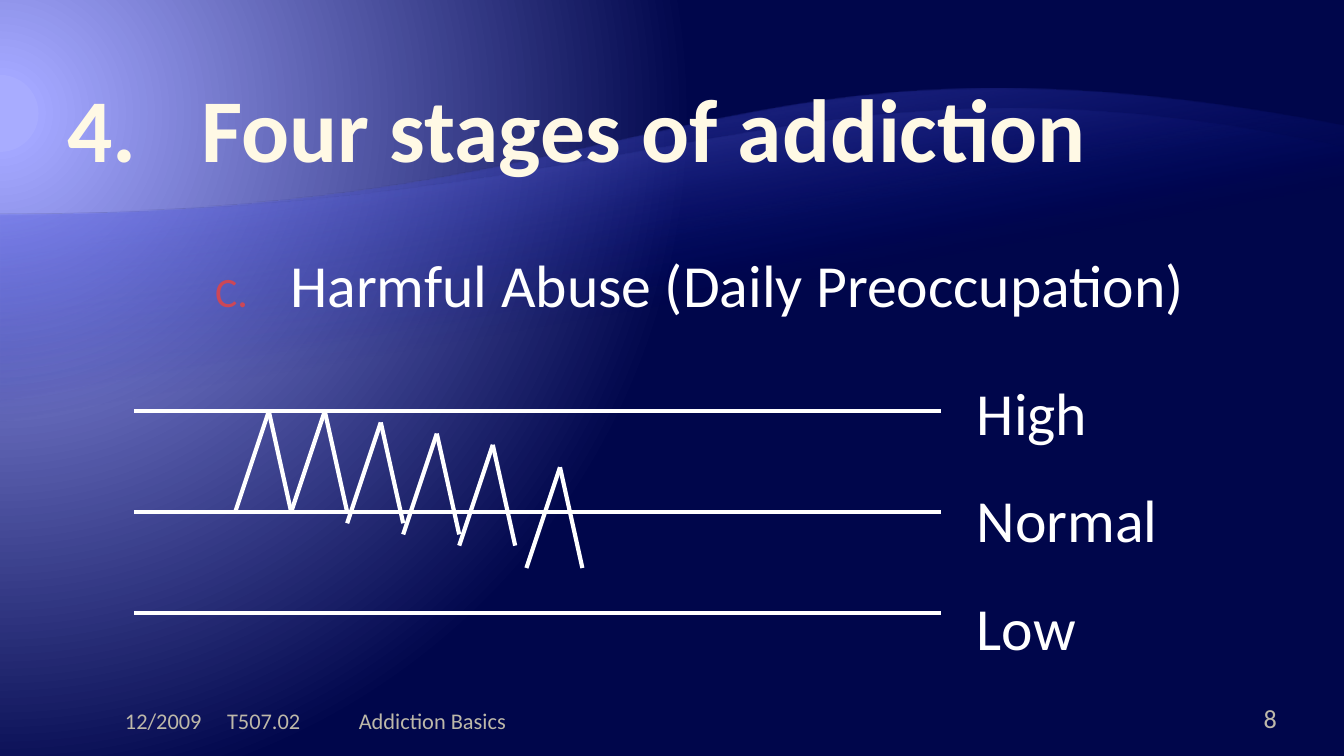
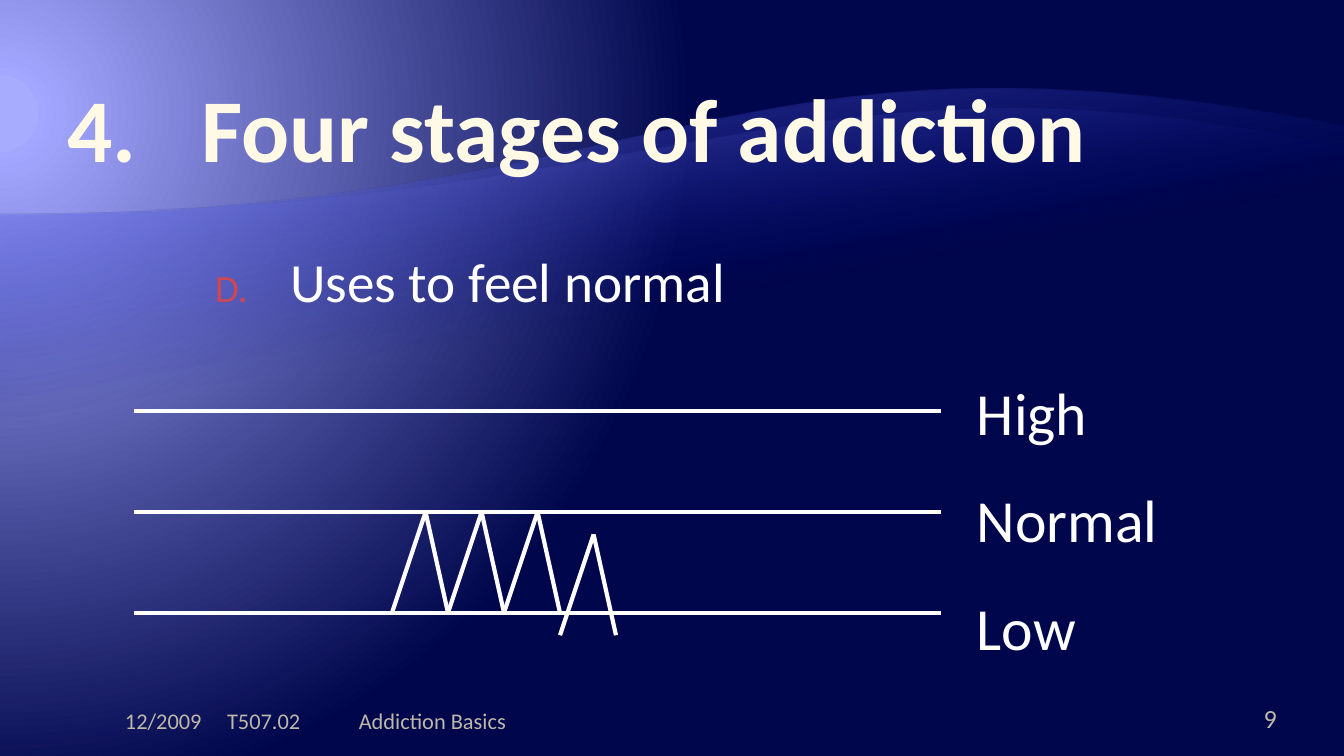
from pptx import Presentation
from pptx.dml.color import RGBColor
from pptx.enum.shapes import MSO_CONNECTOR
from pptx.enum.text import MSO_ANCHOR, MSO_AUTO_SIZE, PP_ALIGN
from pptx.oxml import parse_xml
from pptx.oxml.ns import nsdecls, qn
from pptx.util import Inches, Pt
from lxml.etree import SubElement

FONT = "Calibri"
WHITE = RGBColor(0xFF, 0xFF, 0xFF)
CREAM = RGBColor(0xFF, 0xF9, 0xE5)
SAND = RGBColor(0xBD, 0xB8, 0xA9)
RED = RGBColor(0xCC, 0x47, 0x57)
NAVY = RGBColor(0x00, 0x06, 0x4B)
BLUE = RGBColor(0x00, 0x0D, 0x9E)
PERIWINKLE = RGBColor(0x79, 0x7F, 0xFF)
LILAC = RGBColor(0xA3, 0xA7, 0xFF)
PALE_LILAC = RGBColor(0xA8, 0xAC, 0xFF)

WIDTH, HEIGHT = 10, 5.625
TITLE_BOX = (0.5, 0.31, 9, 1.04)
STAGE_BOX = (1.5, 1.79, 8.5, 0.94)
GRAPH_BOX = (1, 3.06, 6, 1.5)
LABEL_BOX = (7.17, 2.48, 2.33, 2.44)
FOOTER_TOP, FOOTER_HEIGHT = 5.21, 0.3

TITLE = "4.\tFour stages of addiction"
LEVELS = ("High", "Normal", "Low")
GRAPH_COLUMNS, GRAPH_ROWS = 72, 18
RISE_COLUMNS, FALL_COLUMNS, PEAK_ROWS = 3, 2, 9

# Each swing is the (column, row) of its low starting point on the graph grid
STAGES = [
    dict(name="Harmful Abuse (Daily Preoccupation)", letter=3, size=32, number=8,
         swings=[(9, 9), (14, 9), (19, 10), (24, 11), (29, 12), (35, 14)]),
    dict(name="Uses to feel normal", letter=4, size=29.6, number=9,
         swings=[(23, 18), (28, 18), (33, 18), (38, 20)]),
]


def place(shape, box):
    shape.left, shape.top, shape.width, shape.height = map(Inches, box)


def write(shape, lines, size, color, bold=False):
    frame = shape.text_frame
    frame.word_wrap = True
    frame.auto_size = MSO_AUTO_SIZE.NONE
    frame.text = "\n".join(lines)
    for para in frame.paragraphs:
        for span in para.runs:
            font = span.font
            font.name, font.size, font.bold = FONT, Pt(size), bold
            font.color.rgb = color
    return frame


def set_insets(frame, left, top, right, bottom):
    frame.margin_left, frame.margin_top = Inches(left), Inches(top)
    frame.margin_right, frame.margin_bottom = Inches(right), Inches(bottom)


def set_gradient(fill, parent, stops, direction):
    """Stops are (percent, colour, opacity percent)."""
    fill.solid()
    marks = "".join(
        f'<a:gs pos="{position * 1000}"><a:srgbClr val="{color}">'
        f'<a:alpha val="{opacity * 1000}"/></a:srgbClr></a:gs>'
        for position, color, opacity in stops)
    gradient = parse_xml(f'<a:gradFill {nsdecls("a")} rotWithShape="1">'
                         f'<a:gsLst>{marks}</a:gsLst>{direction}</a:gradFill>')
    solid = parent.find(qn("a:solidFill"))
    parent.replace(solid, gradient)


def add_wave(page, layout, bottom, bend, right_edge, color, opacity, order):
    """Band with a curved upper edge, shared through the layout."""
    left_edge = 1.6
    builder = page.shapes.build_freeform(Inches(WIDTH), Inches(bottom))
    builder.add_line_segments(
        [(Inches(x), Inches(y)) for x, y in
         ((0, bottom), (0, left_edge), (WIDTH, right_edge))], close=True)
    wave = builder.convert_to_shape()
    wave.shadow.inherit = False
    wave.line.fill.background()
    set_gradient(wave.fill, wave.element.spPr,
                 [(65, BLUE, 0), (100, color, opacity)],
                 f'<a:lin ang="{260 * 60000}" scaled="0"/>')

    # Bend the upper edge
    edge = wave.element.findall(".//" + qn("a:lnTo"))[2]
    curve = parse_xml(f'<a:cubicBezTo {nsdecls("a")}/>')
    for x, y in ((5, left_edge), bend, (WIDTH, right_edge)):
        SubElement(curve, qn("a:pt"), x=str(Inches(x)), y=str(Inches(y - right_edge)))
    edge.getparent().replace(edge, curve)

    wave.name = f"Wave {order}"
    wave.element.nvSpPr.cNvPr.set("id", str(100 + order))
    layout.shapes.element.insert(1 + order, wave.element)


def style_layout(page, layout):
    background = layout.background.fill
    background.solid()
    holder = layout.element.find(".//" + qn("p:bgPr"))
    set_gradient(background, holder,
                 [(5, PALE_LILAC, 100), (5, LILAC, 100), (90, NAVY, 100)],
                 '<a:path path="circle"><a:fillToRect l="20000" t="30000" '
                 'r="135000" b="100000"/></a:path>')
    add_wave(page, layout, 5.5, (5.34, 0.04), 0.94, PERIWINKLE, 55, 1)
    add_wave(page, layout, 4.77, (5.98, 0.23), 1.1, LILAC, 30, 2)


def add_title(page, box):
    title = page.shapes.title
    place(title, box)
    frame = write(title, [TITLE], 48, CREAM, bold=True)
    frame.vertical_anchor = MSO_ANCHOR.BOTTOM
    set_insets(frame, 0, 0.01, 0, 0.01)
    frame.paragraphs[0].alignment = PP_ALIGN.LEFT


def add_stage_name(page, box, stage):
    body = page.placeholders[1]
    place(body, box)
    para = write(body, [stage["name"]], stage["size"], WHITE).paragraphs[0]
    para.level = 1
    para.space_after = Pt(15)
    # Hanging lettered bullet
    props = para._p.get_or_add_pPr()
    indent = Inches(0.56)
    props.set("marL", str(indent))
    props.set("indent", str(-indent))
    before = parse_xml(f'<a:spcBef {nsdecls("a")}><a:spcPct val="20000"/></a:spcBef>')
    props.insert(0, before)
    color = SubElement(props, qn("a:buClr"))
    SubElement(color, qn("a:srgbClr"), val=str(RED))
    SubElement(props, qn("a:buSzPct"), val="70000")
    SubElement(props, qn("a:buFont"), typeface=FONT)
    SubElement(props, qn("a:buAutoNum"), type="alphaUcPeriod",
               startAt=str(stage["letter"]))


def add_line(page, start, end):
    line = page.shapes.add_connector(MSO_CONNECTOR.STRAIGHT,
                                     *map(Inches, (*start, *end)))
    line.line.color.rgb = WHITE
    line.line.width = Pt(2.25)
    SubElement(line.element.spPr, qn("a:effectLst"))


def add_levels(page, box):
    left, top, width, height = box
    for index in range(len(LEVELS)):
        y = top + height * index / (len(LEVELS) - 1)
        add_line(page, (left, y), (left + width, y))


def add_level_labels(page, box):
    labels = page.shapes.add_textbox(*map(Inches, box))
    frame = write(labels, LEVELS, 32, WHITE)
    frame.auto_size = MSO_AUTO_SIZE.SHAPE_TO_FIT_TEXT
    for para in frame.paragraphs:
        para.line_spacing = 1.5


def add_swings(page, box, swings):
    left, top, width, height = box

    def point(column, row):
        return (left + width * column / GRAPH_COLUMNS,
                top + height * row / GRAPH_ROWS)

    for column, row in swings:
        peak = point(column + RISE_COLUMNS, row - PEAK_ROWS)
        add_line(page, point(column, row), peak)
        add_line(page, point(column + RISE_COLUMNS + FALL_COLUMNS, row), peak)


def add_footer_text(page, left, width, text, size, insets, align=PP_ALIGN.LEFT):
    box = page.shapes.add_textbox(
        *map(Inches, (left, FOOTER_TOP, width, FOOTER_HEIGHT)))
    frame = write(box, [text], size, SAND)
    frame.vertical_anchor = MSO_ANCHOR.BOTTOM
    set_insets(frame, insets[0], 0.05, insets[1], 0.05)
    frame.paragraphs[0].alignment = align
    return frame


def add_footer(page, number):
    date = add_footer_text(page, 0.5, 2.17, "12/2009\tT507.02", 12, (0.43, 0.1))
    tabs = SubElement(date.paragraphs[0]._p.get_or_add_pPr(), qn("a:tabLst"))
    SubElement(tabs, qn("a:tab"), pos=str(Inches(0.76)), algn="l")
    add_footer_text(page, 8.92, 0.58, str(number), 14, (0.1, 0), PP_ALIGN.RIGHT)
    add_footer_text(page, 2.67, 3.17, "Addiction Basics", 12, (0, 0.1))


def add_stage_slide(deck, layout, stage):
    page = deck.slides.add_slide(layout)
    add_title(page, TITLE_BOX)
    add_stage_name(page, STAGE_BOX, stage)
    add_levels(page, GRAPH_BOX)
    add_level_labels(page, LABEL_BOX)
    add_swings(page, GRAPH_BOX, stage["swings"])
    add_footer(page, stage["number"])
    return page


def main():
    deck = Presentation()
    deck.slide_width, deck.slide_height = Inches(WIDTH), Inches(HEIGHT)
    layout = deck.slide_layouts[1]
    pages = [add_stage_slide(deck, layout, stage) for stage in STAGES]
    style_layout(pages[0], layout)
    deck.save("out.pptx")


if __name__ == "__main__":
    main()
